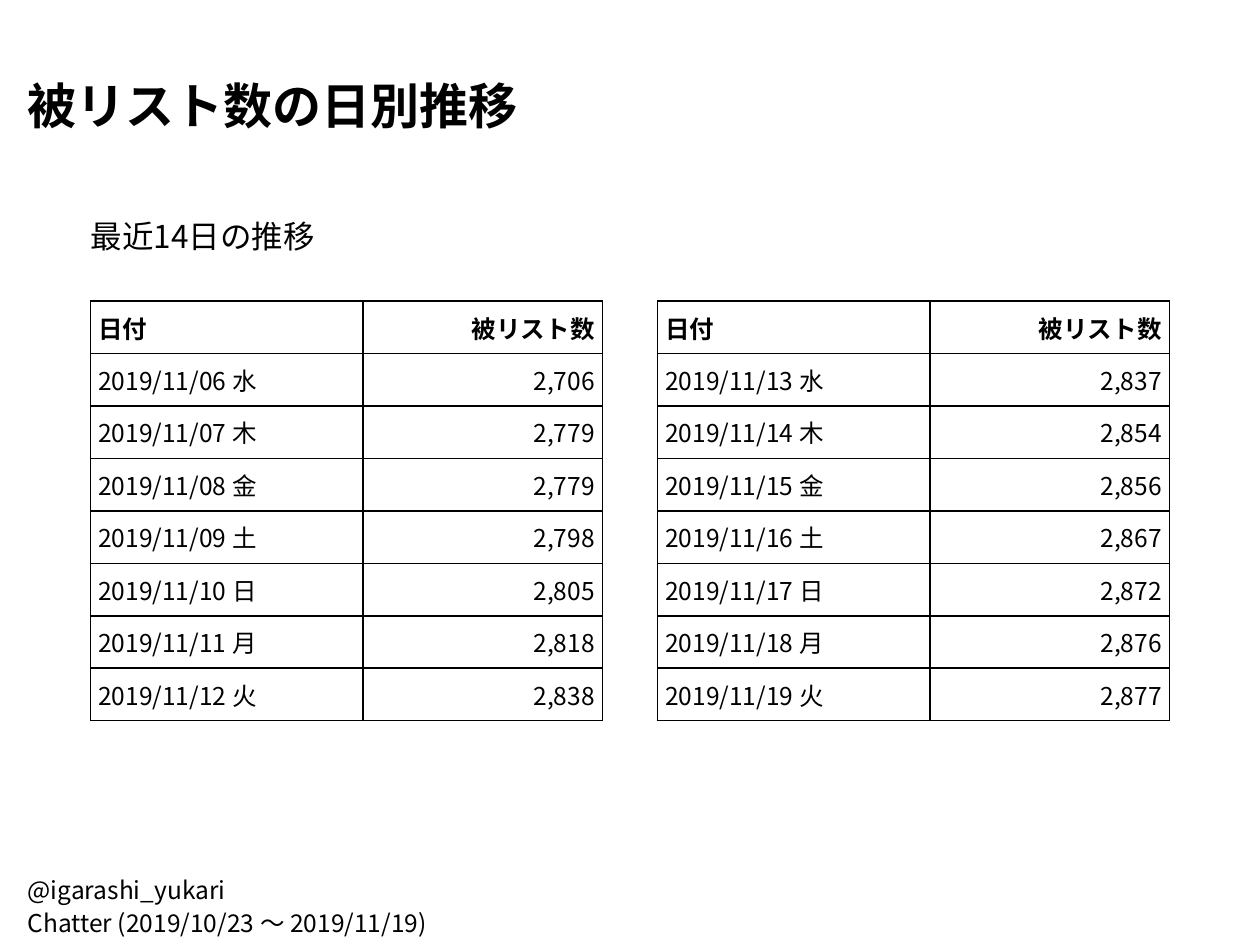
from lxml.etree import SubElement
from pptx import Presentation
from pptx.dml.color import RGBColor
from pptx.enum.text import MSO_ANCHOR as Anchor, PP_ALIGN as Align
from pptx.oxml.ns import qn
from pptx.util import Inches, Pt

WEEKDAYS = "水木金土日月火"
HEADERS = ("日付", "被リスト数")
FIRST_WEEK = (2706, 2779, 2779, 2798, 2805, 2818, 2838)
SECOND_WEEK = (2837, 2854, 2856, 2867, 2872, 2876, 2877)


def color(value):
    return RGBColor.from_string(value)


def write(tf, text, font, ink, size=14, bold=False, align=Align.LEFT, spacing=None):
    p = tf.paragraphs[0]
    p.text = text
    p.alignment = align
    if spacing:
        p.line_spacing = Pt(spacing)
    for r in p.runs:
        r.font.name = font
        r.font.size = Pt(size)
        r.font.bold = bold
        r.font.color.rgb = color(ink)
        SubElement(r.font._element, qn("a:ea"), typeface=font)


def week_rows(first_day, counts):
    return [
        (f"2019/11/{day:02} {weekday}", f"{count:,}")
        for day, (weekday, count) in enumerate(zip(WEEKDAYS, counts), first_day)
    ]


class Page:
    """Holds the style and the slide being built."""

    font = "Noto Sans CJK JP"
    ink = "000000"
    columns = (2.16, 1.9)
    row_height = 3.33 / 8

    def __init__(self, slide):
        self.slide = slide

    def text(self, text, left, top, width, height, **style):
        box = self.slide.shapes.add_textbox(
            Inches(left), Inches(top), Inches(width), Inches(height))
        tf = box.text_frame
        tf.word_wrap = True
        tf.margin_left = tf.margin_right = Inches(0.22)
        tf.margin_top = tf.margin_bottom = Inches(0.11)
        write(tf, text, self.font, self.ink, **style)

    def table(self, rows, left, top):
        table = self.slide.shapes.add_table(
            len(rows), len(self.columns), Inches(left), Inches(top),
            Inches(sum(self.columns)), Inches(self.row_height * len(rows))).table
        table.first_row = table.horz_banding = False
        for column, width in zip(table.columns, self.columns):
            column.width = Inches(width)
        for i, values in enumerate(rows):
            table.rows[i].height = Inches(self.row_height)
            for j, value in enumerate(values):
                self.cell(table.cell(i, j), value, bold=i == 0,
                          align=Align.RIGHT if j else Align.LEFT)

    def cell(self, cell, value, **style):
        cell.vertical_anchor = Anchor.MIDDLE
        cell.margin_left = cell.margin_right = Inches(0.06)
        cell.margin_top = cell.margin_bottom = Inches(0.06)
        write(cell.text_frame, value, self.font, self.ink, **style)
        tc_pr = cell._tc.get_or_add_tcPr()
        for side in ("lnL", "lnR", "lnT", "lnB"):
            line = SubElement(tc_pr, qn(f"a:{side}"), w=str(Pt(1)))
            fill = SubElement(line, qn("a:solidFill"))
            SubElement(fill, qn("a:srgbClr"), val=self.ink)
        cell.fill.background()


def main():
    prs = Presentation()
    prs.slide_width, prs.slide_height = Inches(10), Inches(7.5)
    s = prs.slides.add_slide(prs.slide_layouts[6])
    page = Page(s)
    page.text("被リスト数の日別推移", 0, 0.44, 10, 0.61,
              size=28, bold=True, spacing=37.3)
    page.text("最近14日の推移", 0.5, 1.58, 9, 0.47, size=18, spacing=24)
    weeks = ((6, FIRST_WEEK), (13, SECOND_WEEK))
    for i, (first_day, counts) in enumerate(weeks):
        page.table([HEADERS] + week_rows(first_day, counts), 0.72 + 4.5 * i, 2.39)
    page.text("@igarashi_yukari\nChatter (2019/10/23 〜 2019/11/19)",
              0, 6.81, 7, 0.61, spacing=18.7)
    prs.save("out.pptx")


if __name__ == "__main__":
    main()
